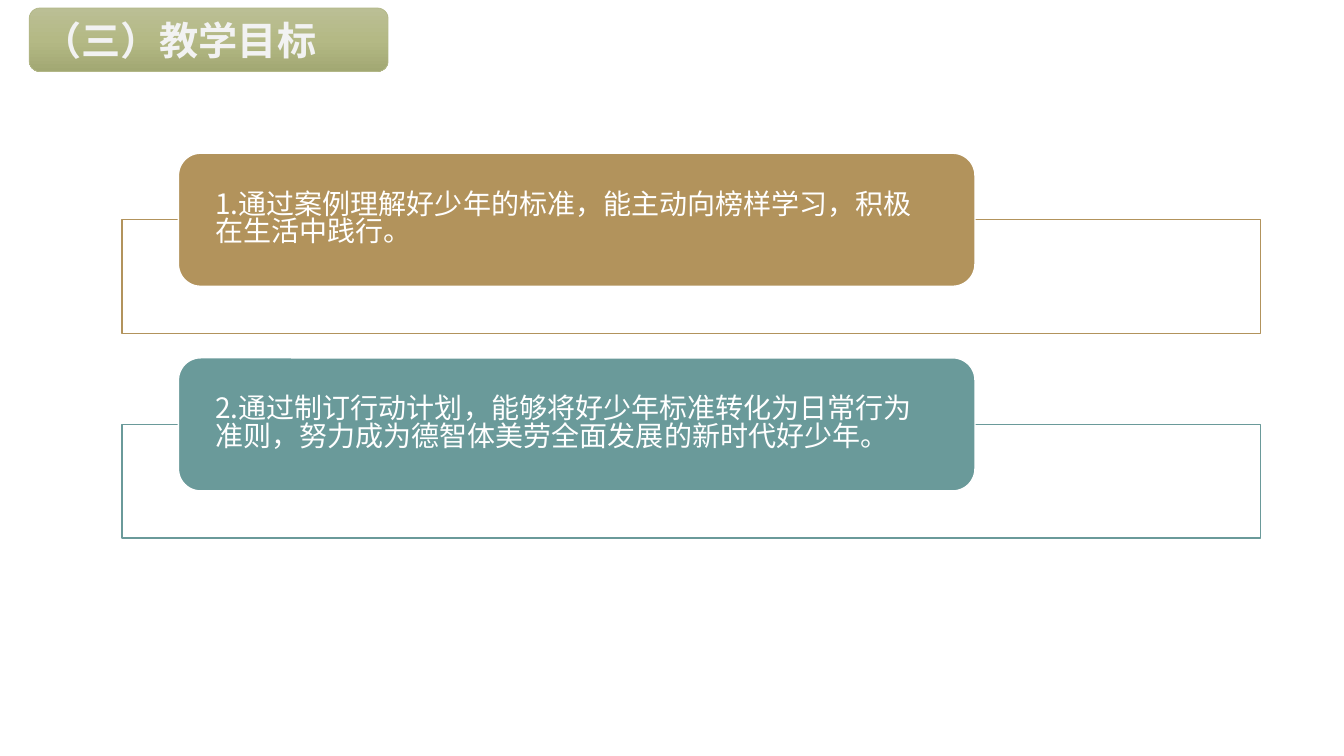
"""Build the teaching-goals slide."""
from lxml import etree
from pptx import Presentation
from pptx.dml.color import RGBColor
from pptx.enum.shapes import MSO_SHAPE as Shape
from pptx.enum.text import MSO_ANCHOR as Anchor, PP_ALIGN as Align
from pptx.oxml.ns import qn
from pptx.util import Inches, Pt

HEADING = "（三）教学目标"
GOALS = [
    ("1.通过案例理解好少年的标准，能主动向榜样学习，积极在生活中践行。", "gold"),
    ("2.通过制订行动计划，能够将好少年标准转化为日常行为准则，"
     "努力成为德智体美劳全面发展的新时代好少年。", "teal"),
]
COLORS = {
    "gold": "B2935C", "teal": "6A9A9A", "white": "FFFFFF", "pale": "F2F2F2",
    "olive": "B2B787", "olive_light": "BBBF95", "olive_mid": "B4B985",
    "olive_dark": "A2A873",
}
FONT = "Noto Sans CJK SC"
SLIDE_W, SLIDE_H = 13.33, 7.5
HEADING_BOX = (0.29, 0.08, 3.56, 0.63)
FRAME_LEFT, FRAME_W, FRAME_H = 1.21, 11.29, 1.13
CARD_LEFT, CARD_W, CARD_H = 1.77, 7.9, 1.32
FIRST_CARD_TOP, ROW_PITCH = 1.52, 2.03
CARD_PAD = 0.065


def rgb(name):
    return RGBColor.from_string(COLORS[name])


def add_panel(slide, kind, box, fill, line, width, alpha=None):
    panel = slide.shapes.add_shape(kind, *map(Inches, box))
    panel.shadow.inherit = False
    panel.fill.solid()
    panel.fill.fore_color.rgb = rgb(fill)
    panel.line.color.rgb = rgb(line)
    panel.line.width = Pt(width)
    if alpha is not None:
        color = panel.fill._xPr.find(qn("a:solidFill"))[0]
        etree.SubElement(color, qn("a:alpha"), val=str(alpha * 1000))
    return panel


def set_gradient(panel, names):
    panel.fill.gradient()
    panel.fill.gradient_angle = 270
    stops = panel.fill._xPr.find(qn("a:gradFill")).find(qn("a:gsLst"))
    for stop in list(stops):
        stops.remove(stop)
    for index, name in enumerate(names):
        position = 100000 * index // (len(names) - 1)
        stop = etree.SubElement(stops, qn("a:gs"), pos=str(position))
        etree.SubElement(stop, qn("a:srgbClr"), val=COLORS[name])


def write(shape, text, size, color, bold=False, inset=(0.1, 0.05), spacing=None):
    frame = shape.text_frame
    frame.word_wrap = True
    frame.vertical_anchor = Anchor.MIDDLE
    frame.margin_left = frame.margin_right = Inches(inset[0])
    frame.margin_top = frame.margin_bottom = Inches(inset[1])
    paragraph = frame.paragraphs[0]
    paragraph.alignment = Align.LEFT
    if spacing:
        paragraph.line_spacing = spacing
    run = paragraph.add_run()
    run.text = text
    run.font.size = Pt(size)
    run.font.bold = bold
    run.font.color.rgb = rgb(color)
    run.font.name = FONT
    etree.SubElement(run.font._element, qn("a:ea"), typeface=FONT)


def add_goal(slide, row, text, color):
    top = FIRST_CARD_TOP + row * ROW_PITCH
    frame_box = (FRAME_LEFT, top + CARD_H / 2, FRAME_W, FRAME_H)
    add_panel(slide, Shape.RECTANGLE, frame_box, "white", color, 1, alpha=90)
    card_box = (CARD_LEFT, top, CARD_W, CARD_H)
    add_panel(slide, Shape.ROUNDED_RECTANGLE, card_box, color, "white", 1)
    text_box = (CARD_LEFT + CARD_PAD, top + CARD_PAD,
                CARD_W - 2 * CARD_PAD, CARD_H - 2 * CARD_PAD)
    goal = slide.shapes.add_textbox(*map(Inches, text_box))
    write(goal, text, 20, "white", inset=(0.3, 0), spacing=0.82)


def main():
    deck = Presentation()
    deck.slide_width, deck.slide_height = Inches(SLIDE_W), Inches(SLIDE_H)
    slide = deck.slides.add_slide(deck.slide_layouts[6])
    heading = add_panel(slide, Shape.ROUNDED_RECTANGLE, HEADING_BOX,
                        "olive_mid", "olive", 0.5)
    set_gradient(heading, ["olive_light", "olive_mid", "olive_dark"])
    write(heading, HEADING, 28, "pale", bold=True)
    for row, (text, color) in enumerate(GOALS):
        add_goal(slide, row, text, color)
    deck.save("out.pptx")


if __name__ == "__main__":
    main()
